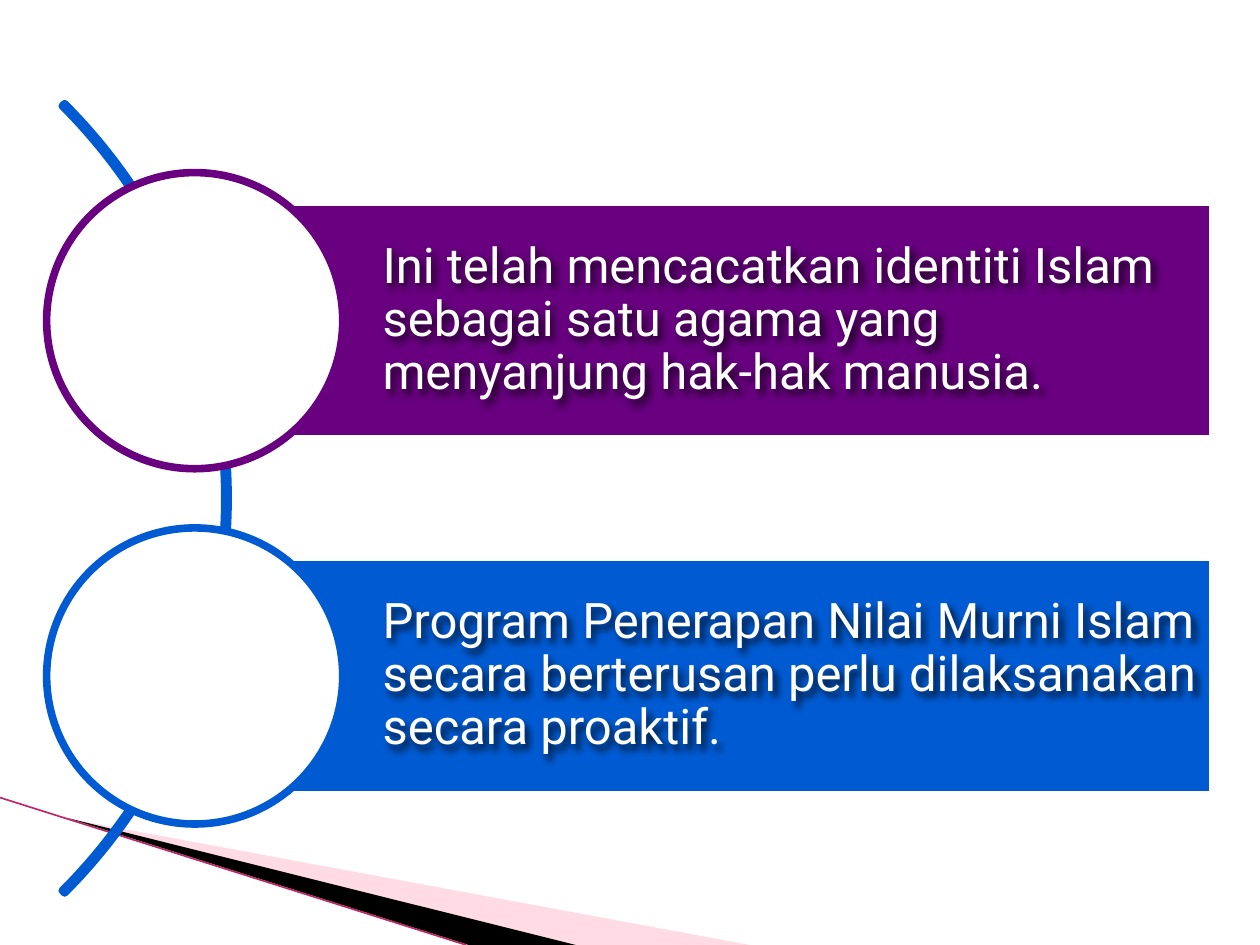
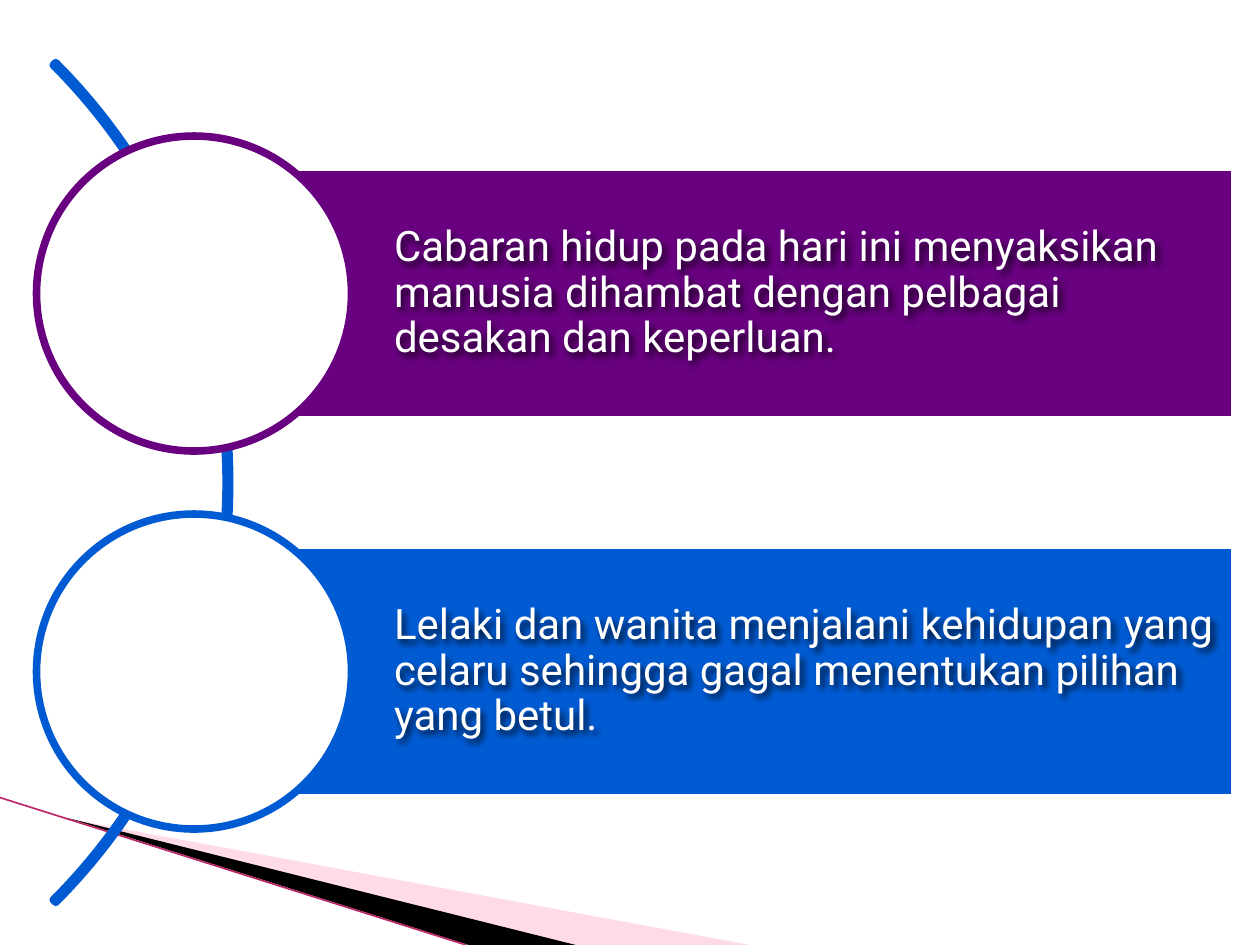
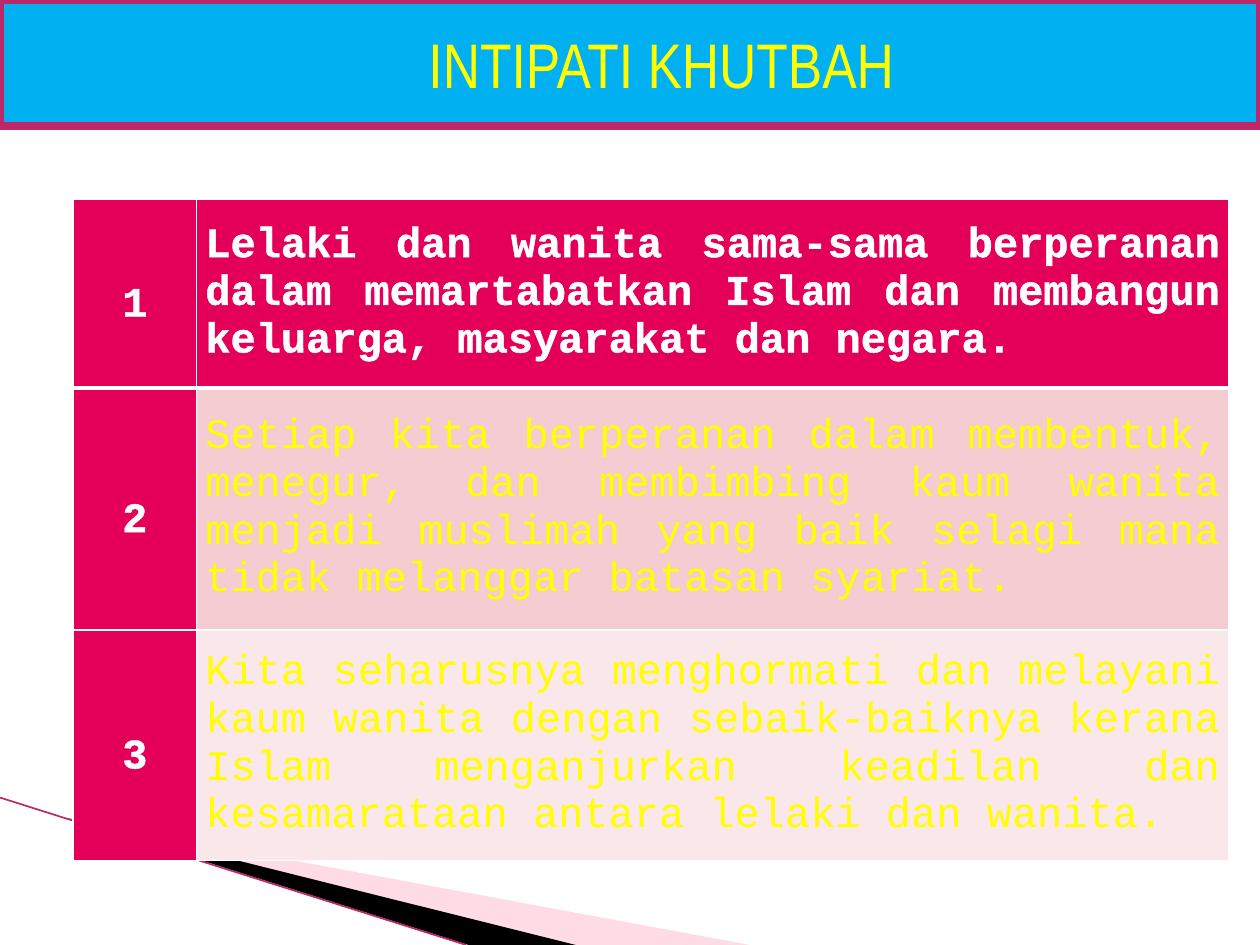
from lxml import etree
from pptx import Presentation
from pptx.dml.color import RGBColor
from pptx.enum.shapes import MSO_CONNECTOR, MSO_SHAPE
from pptx.enum.text import MSO_ANCHOR, PP_ALIGN
from pptx.oxml.ns import qn
from pptx.util import Inches, Pt

ARC, RECTANGLE, OVAL = MSO_SHAPE.BLOCK_ARC, MSO_SHAPE.RECTANGLE, MSO_SHAPE.OVAL
STRAIGHT = MSO_CONNECTOR.STRAIGHT
MIDDLE = MSO_ANCHOR.MIDDLE
CENTER, JUSTIFY = PP_ALIGN.CENTER, PP_ALIGN.JUSTIFY

WIDTH, HEIGHT = 10, 7.5
COLORS = {
    "white": "FFFFFF", "black": "000000", "yellow": "FFFF00", "pink": "FFA5BF",
    "magenta": "BD2968", "blue": "005BD3", "purple": "68007F", "sky": "00B0F0",
    "crimson": "E40059", "rose": "F5CCD1", "blush": "FAE7EA",
}
ACCENTS = ("purple", "blue")
LINE_WIDTH = 4.33
WEDGES = (
    ("pink", 40, ((0.55, 6.5), (5.95, 7.5), (4.56, 7.5))),
    ("black", 100, ((0.53, 6.49), (4.57, 7.5), (3.72, 7.5))),
)
POINT_SLIDES = (
    ((0.37, 1.37, 9.26, 5.17), 28, (
        "Ini telah mencacatkan identiti Islam sebagai satu agama yang menyanjung hak-hak manusia.",
        "Program Penerapan Nilai Murni Islam secara berterusan perlu dilaksanakan secara proaktif.",
    )),
    ((0.29, 1.08, 9.51, 5.5), 24, (
        "Cabaran hidup pada hari ini menyaksikan manusia dihambat dengan pelbagai desakan dan keperluan.",
        "Lelaki dan wanita menjalani kehidupan yang celaru sehingga gagal menentukan pilihan yang betul.",
    )),
)
SUMMARY = (
    (1.5, "crimson", "white", "Lelaki dan wanita sama-sama berperanan dalam memartabatkan Islam "
     "dan membangun keluarga, masyarakat dan negara."),
    (1.92, "rose", "yellow", "Setiap kita berperanan dalam membentuk, menegur, dan membimbing "
     "kaum wanita menjadi muslimah yang baik selagi mana tidak melanggar batasan syariat."),
    (1.83, "blush", "yellow", "Kita seharusnya menghormati dan melayani kaum wanita dengan "
     "sebaik-baiknya kerana Islam menganjurkan keadilan dan kesamarataan antara lelaki dan wanita."),
)


def rgb(name):
    """Return the named colour."""
    return RGBColor.from_string(COLORS[name])


def add_child(parent, tag, **attributes):
    """Append a drawing element with the given attributes."""
    return etree.SubElement(parent, qn(tag), {key: str(value) for key, value in attributes.items()})


def add_color(parent, name, alpha=100):
    """Append a colour element, transparent if alpha is below 100."""
    color = add_child(parent, "a:srgbClr", val=COLORS[name])
    if alpha < 100:
        add_child(color, "a:alpha", val=alpha * 1000)


def add_stroke(parent, tag, name, points):
    """Append a solid stroke and return it."""
    stroke = add_child(parent, tag, w=Pt(points))
    add_color(add_child(stroke, "a:solidFill"), name)
    return stroke


def paint(shape, fill=None, line=None):
    """Set fill and line of a shape and remove its shadow."""
    shape.shadow.inherit = False
    if fill:
        shape.fill.solid()
        shape.fill.fore_color.rgb = rgb(fill)
    else:
        shape.fill.background()
    if line:
        shape.line.color.rgb = rgb(line)
        shape.line.width = Pt(LINE_WIDTH)
    else:
        shape.line.fill.background()


def add_preset(page, preset, box, fill=None, line=None):
    """Add a painted preset shape in a box."""
    shape = page.shapes.add_shape(preset, *map(Inches, box))
    paint(shape, fill, line)
    return shape


def write(frame, text, font, size, color, bold=False, outline=None):
    """Write one formatted paragraph and return it."""
    frame.word_wrap = True
    para = frame.paragraphs[0]
    para.text = text
    span = para.runs[0]
    if outline:
        properties = span.font._element
        properties.insert(0, add_stroke(properties, "a:ln", *outline))
    span.font.name = font
    span.font.size = Pt(size)
    span.font.bold = bold
    span.font.color.rgb = rgb(color)
    return para


def add_corner(page):
    """Draw the wedges and the thin line at the bottom left."""
    for color, alpha, points in WEDGES:
        corners = [tuple(map(Inches, point)) for point in points]
        builder = page.shapes.build_freeform(*corners[0])
        builder.add_line_segments(corners[1:])
        wedge = builder.convert_to_shape()
        paint(wedge, color)
        if alpha < 100:
            fill = wedge._element.spPr.find(qn("a:solidFill"))
            add_child(fill[0], "a:alpha", val=alpha * 1000)
    edge = page.shapes.add_connector(STRAIGHT, 0, Inches(6.33), Inches(3.7), Inches(HEIGHT))
    edge.line.color.rgb = rgb("magenta")
    edge.line.width = Pt(0.95)
    add_child(edge._element.spPr, "a:effectLst")


def add_point(page, box, diameter, accent, text, size):
    """Draw a bar with shadowed text and a ring at its left end."""
    left, top, width, _ = box
    bar = (left + diameter / 2, top + 0.1 * diameter, width - diameter / 2, 0.8 * diameter)
    add_preset(page, RECTANGLE, bar, accent, "white")
    label = page.shapes.add_textbox(*map(Inches, bar))
    frame = label.text_frame
    frame.margin_left = Inches(0.635 * diameter)
    frame.margin_right = frame.margin_top = frame.margin_bottom = Inches(0.08)
    frame.vertical_anchor = MIDDLE
    write(frame, text, "Roboto", size, "white").line_spacing = 0.9
    effects = add_child(label._element.spPr, "a:effectLst")
    shadow = add_child(effects, "a:outerShdw", blurRad=Pt(4), dist=Pt(3), dir=2700000)
    add_color(shadow, "black", 80)
    add_preset(page, OVAL, (left, top, diameter, diameter), "white", accent)


def add_point_list(page, box, size, texts):
    """Draw two points on an arc, spaced by the ring diameter."""
    left, top, _, height = box
    diameter = height / 2.2
    arc_size = 3.77 * diameter
    arc_left = left + 0.613 * diameter - arc_size
    arc_top = top + (height - arc_size) / 2
    arc = add_preset(page, ARC, (arc_left, arc_top, arc_size, arc_size), line="blue")
    for index, value in enumerate((189, 27, 0.003)):
        arc.adjustments[index] = value
    for index, (accent, text) in enumerate(zip(ACCENTS, texts)):
        point_box = (left, top + index * 1.2 * diameter, box[2], diameter)
        add_point(page, point_box, diameter, accent, text, size)


def add_title(page, box, text):
    """Draw the title band."""
    band = add_preset(page, RECTANGLE, box, "sky", "magenta")
    frame = band.text_frame
    frame.vertical_anchor = MIDDLE
    para = write(frame, text, "Arial Narrow", 36, "yellow", outline=("black", 1.45))
    para.alignment = CENTER
    properties = para._p.get_or_add_pPr()
    properties.set("marL", "0")
    properties.set("indent", str(Inches(0.5)))


def fill_cell(cell, text, fill, color, bold, rules):
    """Fill a table cell and return its paragraph."""
    properties = cell._tc.get_or_add_tcPr()
    for side, points in zip("LRTB", rules):
        add_stroke(properties, f"a:ln{side}", "white", points)
    cell.fill.solid()
    cell.fill.fore_color.rgb = rgb(fill)
    cell.margin_left = cell.margin_right = Inches(0.07)
    cell.margin_top = cell.margin_bottom = 0
    cell.vertical_anchor = MIDDLE
    return write(cell.text_frame, text, "Courier New", 24, color, bold, (color, 0.75))


def add_summary(page, box, rows):
    """Draw the numbered table."""
    table = page.shapes.add_table(len(rows), 2, *map(Inches, box)).table
    table.first_row = table.horz_banding = False
    number_width = 0.98
    table.columns[0].width = Inches(number_width)
    table.columns[1].width = Inches(box[2] - number_width)
    for index, (height, fill, color, text) in enumerate(rows):
        table.rows[index].height = Inches(height)
        rules = (1, 1, 3 if index == 1 else 1, 3 if index == 0 else 1)
        number = fill_cell(table.cell(index, 0), str(index + 1), "crimson", "white", True, rules)
        number.alignment = CENTER
        number.line_spacing = 1.5
        body = fill_cell(table.cell(index, 1), text, fill, color, index == 0, rules)
        body.alignment = JUSTIFY


def add_page(deck):
    """Add a blank slide with the shared corner."""
    page = deck.slides.add_slide(deck.slide_layouts[6])
    add_corner(page)
    return page


def main():
    """Build and save the deck."""
    deck = Presentation()
    deck.slide_width, deck.slide_height = Inches(WIDTH), Inches(HEIGHT)
    for box, size, texts in POINT_SLIDES:
        add_point_list(add_page(deck), box, size, texts)
    page = add_page(deck)
    add_title(page, (0, 0, WIDTH, 1), "INTIPATI KHUTBAH")
    add_summary(page, (0.58, 1.58, 9.17, 5.25), SUMMARY)
    deck.save("out.pptx")


if __name__ == "__main__":
    main()
